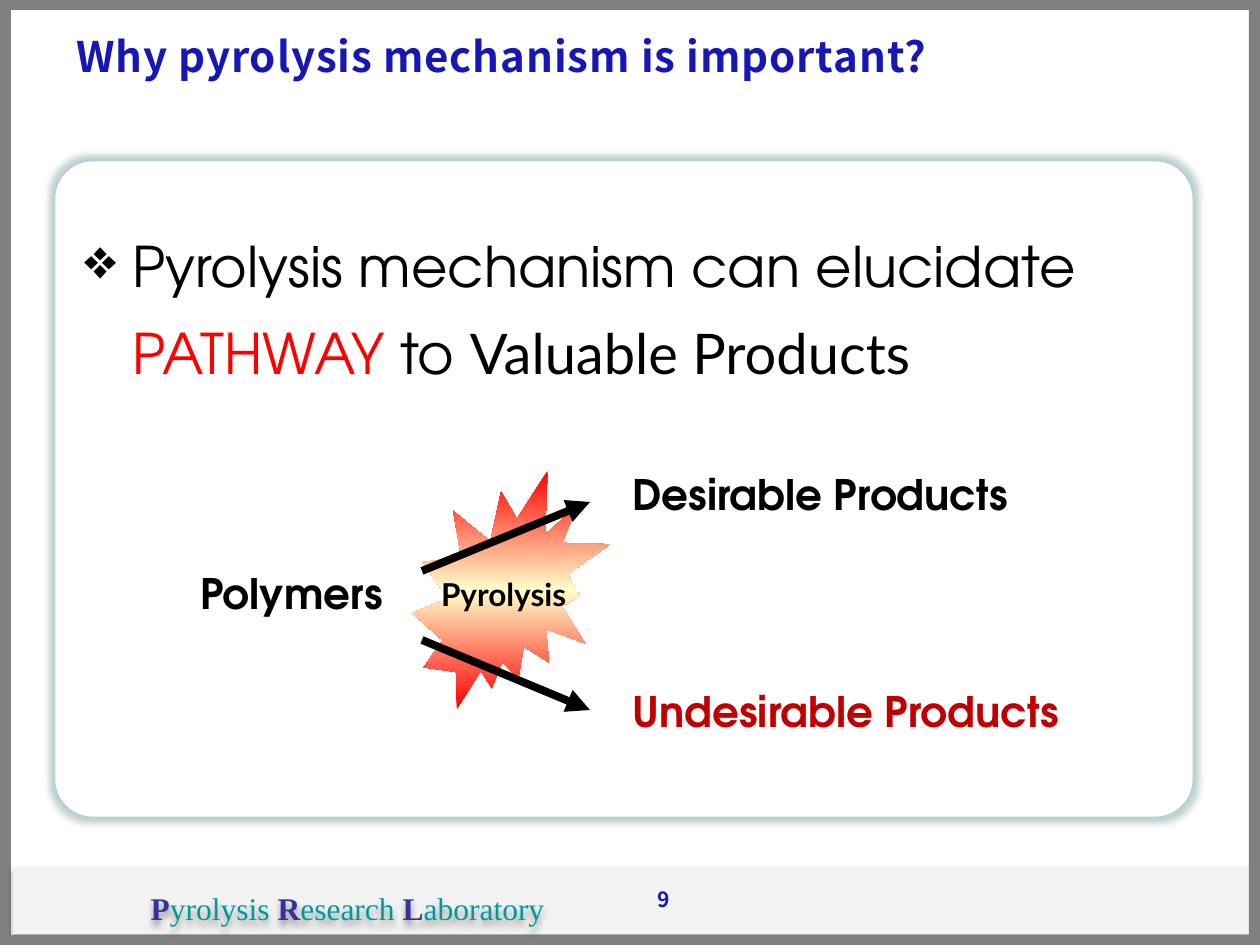
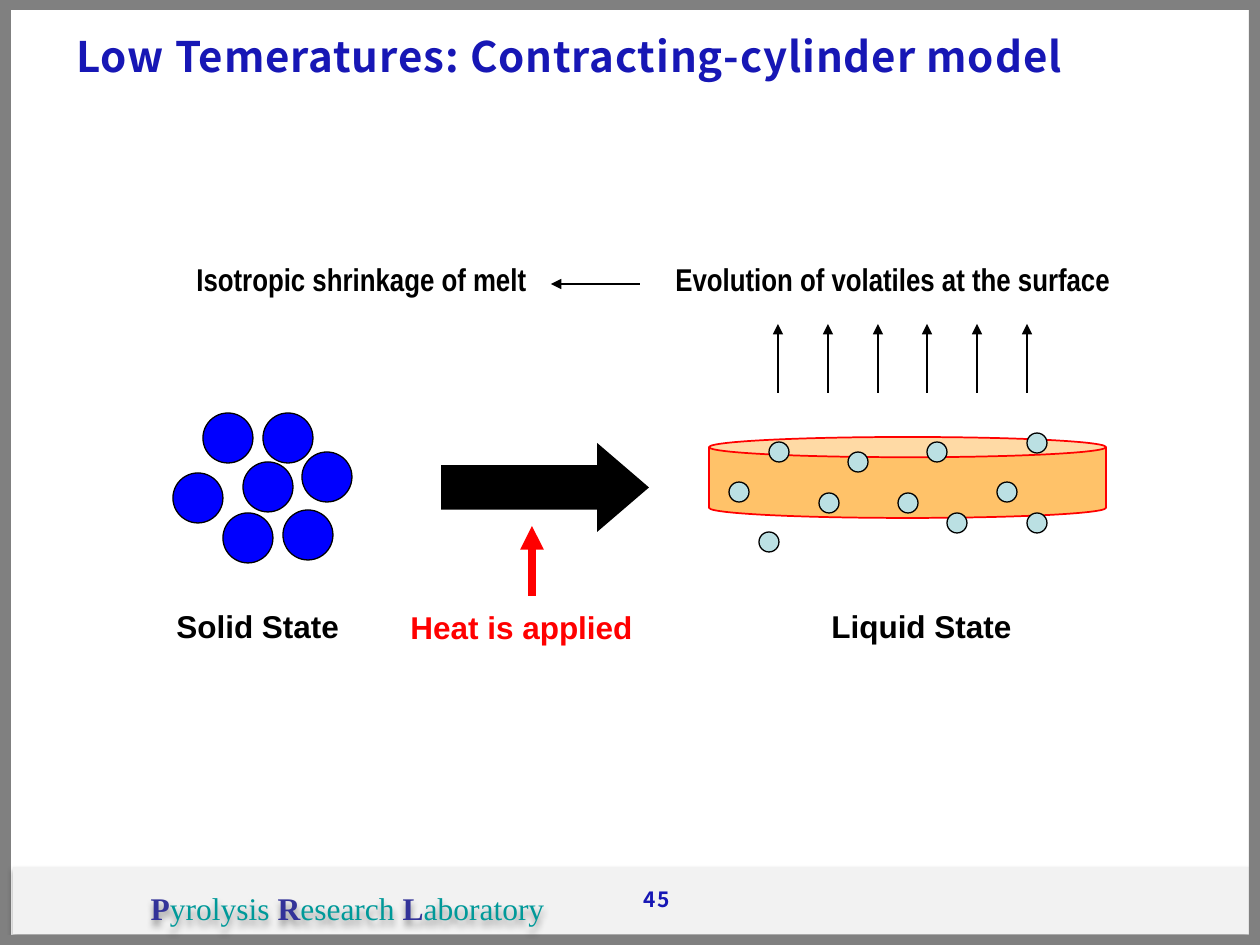
from copy import deepcopy
from lxml import etree
from pptx import Presentation
from pptx import util as u
from pptx.dml.color import RGBColor
from pptx.enum import shapes, text
from pptx.oxml import ns

SCALE = 914400 / 126
BLACK = RGBColor(0, 0, 0)
WHITE = RGBColor(255, 255, 255)
GREY = RGBColor(0x80, 0x80, 0x80)
PALE = RGBColor(0xF2, 0xF2, 0xF2)
NAVY = RGBColor(0x17, 0x17, 0xB5)
INDIGO = RGBColor(0x33, 0x33, 0x99)
TEAL = RGBColor(0, 0x99, 0x99)
RED = RGBColor(255, 0, 0)
DARK_RED = RGBColor(0xC0, 0, 0)
CREAM = RGBColor(255, 255, 0xCC)
BLUE = RGBColor(0, 0, 255)
ORANGE = RGBColor(0xFF, 0xC2, 0x69)
ICE = RGBColor(0xBB, 0xE0, 0xE3)

SHAPE = shapes.MSO_SHAPE
LEFT, CENTER, RIGHT = text.PP_ALIGN.LEFT, text.PP_ALIGN.CENTER, text.PP_ALIGN.RIGHT
TOP, MIDDLE = text.MSO_ANCHOR.TOP, text.MSO_ANCHOR.MIDDLE


def style(name, size, color, bold=False):
    return {"name": name, "size": u.Pt(size), "bold": bold, "color": color}


TITLE = style("Noto Sans CJK KR", 24, NAVY, True)
NUMBER = style("Noto Sans CJK KR", 12, NAVY, True)
INITIAL = style("Times New Roman", 18, INDIGO, True)
REST = style("Times New Roman", 18, TEAL)
BODY = style("TeX Gyre Adventor", 32, BLACK)
PRODUCT = style("TeX Gyre Adventor", 24, BLACK, True)
STATE = style("Arial", 18, BLACK, True)
PROCESS = style("Arial Narrow", 18, BLACK, True)

FRAME = [
    ((0, 0, 11, 945), GREY),
    ((13, 867, 1236, 67), PALE),
    ((1249, 0, 11, 945), GREY),
    ((0, 0, 1260, 10), GREY),
    ((0, 935, 1260, 10), GREY),
]
LABORATORY = [
    ("P", INITIAL), ("yrolysis ", REST),
    ("R", INITIAL), ("esearch ", REST),
    ("L", INITIAL), ("aboratory", REST),
]

PATHWAY = [
    ("Pyrolysis mechanism can elucidate ", BODY),
    ("PATHWAY ", BODY | {"color": RED}),
    ("to ", BODY),
    ("Valuable Products", BODY | {"name": "Lato"}),
]
PATHWAY_LABELS = [
    ("Polymers", (184, 561, 215, 63), PRODUCT, CENTER),
    ("Desirable Products", (620, 462, 418, 63), PRODUCT, LEFT),
    ("Undesirable Products", (620, 679, 471, 63), PRODUCT | {"color": DARK_RED}, LEFT),
]
PATHWAY_ARROWS = [(422, 571, 590, 502), (422, 640, 590, 710)]

MODEL_LABELS = [
    ("Heat is applied", (398, 602, 249, 50), STATE | {"color": RED}, LEFT),
    ("Liquid State", (819, 601, 208, 50), STATE, LEFT),
    ("Solid State", (164, 601, 190, 50), STATE, LEFT),
    ("Evolution of volatiles at the surface", (663, 254, 465, 50), PROCESS, LEFT),
    ("Isotropic shrinkage of melt", (184, 254, 359, 50), PROCESS, LEFT),
]
SOLID_SIZE, BUBBLE_SIZE = 50, 20
SOLIDS = [(203, 413), (263, 413), (243, 462), (173, 473), (223, 513), (302, 452), (283, 510)]
BUBBLES = [
    (759, 532), (819, 493), (898, 493), (848, 452), (1027, 433), (927, 442),
    (729, 482), (769, 442), (1027, 513), (997, 482), (947, 513),
]
VAPOUR_COUNT, VAPOUR_LEFT, VAPOUR_SPAN = 6, 778, 249


def emu(*lengths):
    return [u.Emu(round(length * SCALE)) for length in lengths]


def add_element(parent, tag, **attributes):
    element = etree.SubElement(parent, ns.qn(tag))
    for key, value in attributes.items():
        element.set(key, str(value))
    return element


def add_effect(shape, tag, color, opacity, **attributes):
    properties = shape._element.spPr
    effects = properties.find(ns.qn("a:effectLst"))
    if effects is None:
        effects = add_element(properties, "a:effectLst")
    effect = add_element(effects, tag, **attributes)
    shade = add_element(effect, "a:srgbClr", val=color)
    add_element(shade, "a:alpha", val=opacity * 1000)


def add_figure(page, kind, place, fill, line=None, width=0.75, adjust=()):
    shape = page.shapes.add_shape(kind, *emu(*place))
    shape.shadow.inherit = False
    shape.fill.solid()
    shape.fill.fore_color.rgb = fill
    if line is None:
        shape.line.fill.background()
    else:
        shape.line.color.rgb = line
        shape.line.width = u.Pt(width)
    for index, value in enumerate(adjust):
        shape.adjustments[index] = value
    return shape


def add_arrow(page, ends, color=BLACK, width=4.5):
    arrow = page.shapes.add_connector(shapes.MSO_CONNECTOR.STRAIGHT, *emu(*ends))
    arrow.line.color.rgb = color
    arrow.line.width = u.Pt(width)
    add_element(arrow.line._get_or_add_ln(), "a:tailEnd", type="triangle")
    add_element(arrow._element.spPr, "a:effectLst")


def write(box, spans, align=LEFT, anchor=MIDDLE, wrap=True):
    frame = box.text_frame
    frame.word_wrap = wrap
    frame.vertical_anchor = anchor
    para = frame.paragraphs[0]
    para.alignment = align
    for words, look in spans:
        span = para.add_run()
        span.text = words
        for key, value in look.items():
            if key == "color":
                span.font.color.rgb = value
            else:
                setattr(span.font, key, value)
    return para


def add_text(page, place, spans, **layout):
    box = page.shapes.add_textbox(*emu(*place))
    return box, write(box, spans, **layout)


def add_labels(page, labels):
    for words, place, look, align in labels:
        add_text(page, place, [(words, look)], align=align, anchor=TOP, wrap=False)


def add_page(deck, title, number):
    page = deck.slides.add_slide(deck.slide_layouts[6])
    for place, color in FRAME:
        bar = add_figure(page, SHAPE.RECTANGLE, place, color)
        if color == PALE:
            add_effect(bar, "a:outerShdw", BLACK, 32, blurRad=44450, dist=27940, dir=5400000)
    laboratory, _ = add_text(page, (136, 887, 423, 41), LABORATORY, align=CENTER)
    add_effect(laboratory, "a:outerShdw", BLACK, 40, blurRad=50800, dist=38100, dir=5400000)
    for place, words, look, align in [
        ((64, 21, 1136, 69), title, TITLE, LEFT),
        ((566, 874, 116, 50), number, NUMBER, RIGHT),
    ]:
        _, para = add_text(page, place, [(words, look)], align=align)
        para.runs[0].font._element.set("spc", "50")
    return page


def add_seal(page):
    seal = add_figure(page, SHAPE.EXPLOSION2, (412, 471, 198, 238), RED)
    seal.fill.gradient()
    seal.fill.gradient_angle = 270
    stops = seal._element.spPr.find(".//" + ns.qn("a:gsLst"))
    stops.append(deepcopy(stops[0]))
    for stop, place, color in zip(seal.fill.gradient_stops, (0, 0.5, 1), (RED, CREAM, RED)):
        stop.position = place
        stop.color.rgb = color
    write(seal, [("Pyrolysis", style("Lato", 18, BLACK, True))], align=CENTER, wrap=False)


def build_pathway(deck):
    page = add_page(deck, "Why pyrolysis mechanism is important?", "9")
    panel = add_figure(page, SHAPE.ROUNDED_RECTANGLE, (58, 164, 1132, 650), WHITE, WHITE, 3, [0.054])
    add_effect(panel, "a:glow", ICE, 60, rad=63500)
    add_effect(panel, "a:outerShdw", BLACK, 40, blurRad=63500, dist=0, dir=0)
    _, para = add_text(page, (72, 205, 1134, 624), PATHWAY, anchor=TOP)
    para.line_spacing = 1.3
    properties = para._p.get_or_add_pPr()
    indent = emu(48)[0]
    properties.set("marL", str(indent))
    properties.set("indent", str(-indent))
    add_element(properties, "a:buChar", char="❖")
    add_seal(page)
    add_labels(page, PATHWAY_LABELS)
    for ends in PATHWAY_ARROWS:
        add_arrow(page, ends)


def build_model(deck):
    page = add_page(deck, "Low Temeratures: Contracting-cylinder model", "45")
    add_figure(page, SHAPE.CAN, (709, 437, 397, 81), ORANGE, RED, 1, [0.25])
    add_figure(page, SHAPE.RIGHT_ARROW, (441, 443, 208, 89), BLACK, adjust=[0.5, 0.583])
    for spots, size, color in [(SOLIDS, SOLID_SIZE, BLUE), (BUBBLES, BUBBLE_SIZE, ICE)]:
        for left, top in spots:
            add_figure(page, SHAPE.OVAL, (left, top, size, size), color, BLACK)
    add_arrow(page, (532, 596, 532, 526), RED)
    add_arrow(page, (640, 284, 551, 284), width=0.75)
    for index in range(VAPOUR_COUNT):
        left = VAPOUR_LEFT + round(index * VAPOUR_SPAN / (VAPOUR_COUNT - 1))
        add_arrow(page, (left, 393, left, 324), width=1.5)
    add_labels(page, MODEL_LABELS)


def main():
    deck = Presentation()
    deck.slide_width, deck.slide_height = emu(1260, 945)
    build_pathway(deck)
    build_model(deck)
    deck.save("out.pptx")


if __name__ == "__main__":
    main()
